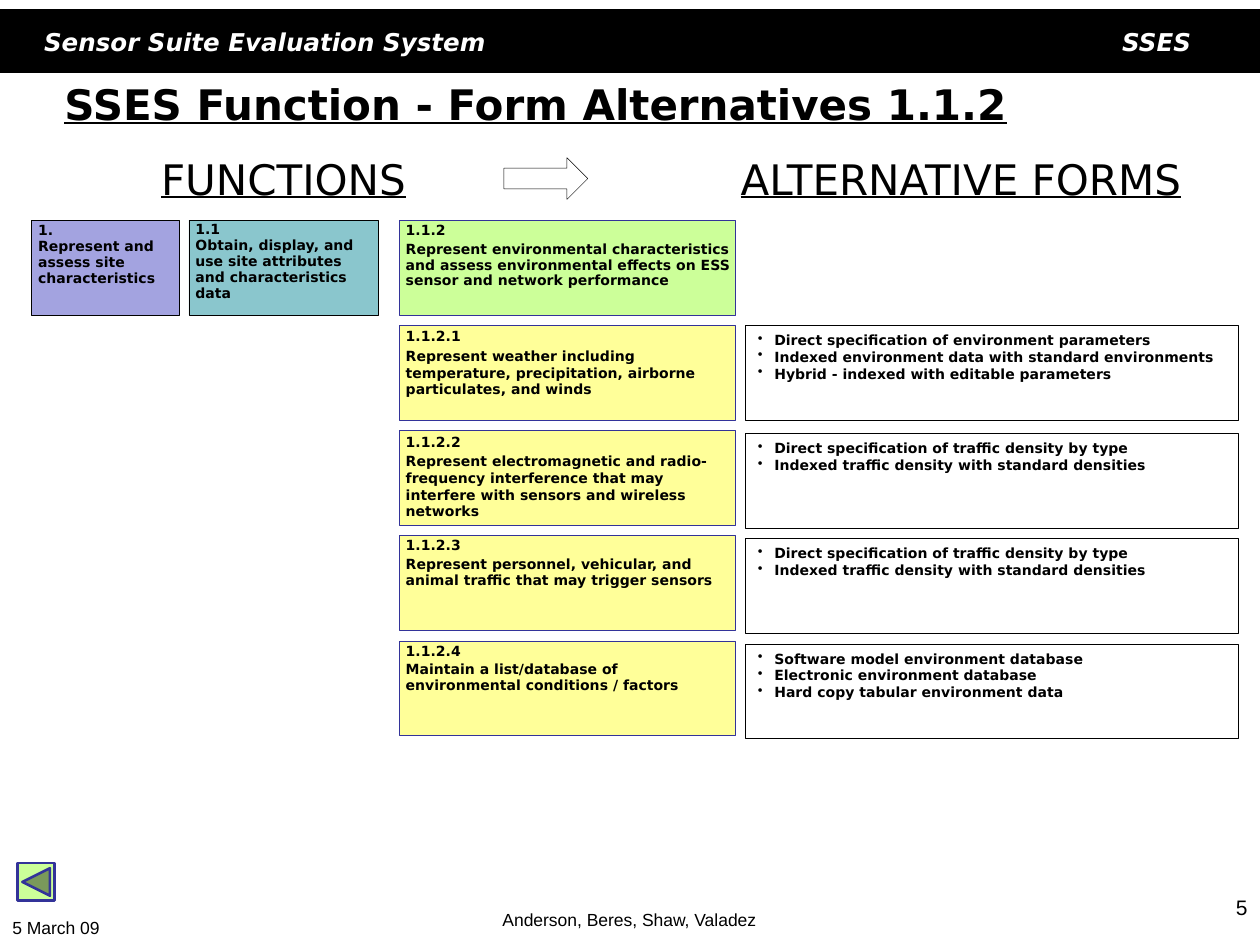
"""Build the SSES function and alternative forms slide for function 1.1.2."""
from lxml import etree
from pptx import Presentation, util as u
from pptx.dml.color import RGBColor
from pptx.enum import shapes, text
from pptx.oxml import ns

BLACK = RGBColor(0x00, 0x00, 0x00)
WHITE = RGBColor(0xFF, 0xFF, 0xFF)
LILAC = RGBColor(0xA3, 0xA3, 0xE0)
TEAL = RGBColor(0x8A, 0xC6, 0xCD)
GREEN = RGBColor(0xCC, 0xFF, 0x99)
YELLOW = RGBColor(0xFF, 0xFF, 0x99)
NAVY = RGBColor(0x33, 0x33, 0x99)
LEFT, CENTER, RIGHT = text.PP_ALIGN.LEFT, text.PP_ALIGN.CENTER, text.PP_ALIGN.RIGHT
TOP, MIDDLE, BOTTOM = text.MSO_ANCHOR.TOP, text.MSO_ANCHOR.MIDDLE, text.MSO_ANCHOR.BOTTOM
KINDS = shapes.MSO_SHAPE

deck = Presentation()
deck.slide_width, deck.slide_height = u.Cm(25.4), u.Cm(19.05)
page = deck.slides.add_slide(deck.slide_layouts[6])


def add_shape(kind, left, top, width, height, fill, line, weight=0.25):
    shape = page.shapes.add_shape(kind, u.Cm(left), u.Cm(top), u.Cm(width), u.Cm(height))
    shape.shadow.inherit = False
    if fill is None:
        shape.fill.background()
    else:
        shape.fill.solid()
        shape.fill.fore_color.rgb = fill
    shape.line.color.rgb = line
    shape.line.width = u.Pt(weight)
    return shape


def write(box, lines, size, font="DejaVu Sans", color=BLACK, bold=False, italic=False,
          underline=False, align=LEFT, anchor=TOP, spacing=1.0, before=0):
    frame = box.text_frame
    frame.word_wrap = True
    frame.vertical_anchor = anchor
    for index, line in enumerate(lines):
        para = frame.add_paragraph() if index else frame.paragraphs[0]
        para.alignment = align
        para.line_spacing = spacing
        para.space_before = u.Pt(before if index else 0)
        span = para.add_run()
        span.text = line
        span.font.name, span.font.size = font, u.Pt(size)
        span.font.color.rgb = color
        span.font.bold, span.font.italic, span.font.underline = bold, italic, underline


add_shape(KINDS.RECTANGLE, 0, 0.2, 25.4, 1.27, BLACK, BLACK, 0.75)

heading = {"size": 24, "underline": True}
banner = {"size": 14, "color": WHITE, "bold": True, "italic": True, "anchor": MIDDLE}
footer = {"size": 10, "font": "Arial"}
labels = [
    ("Sensor Suite Evaluation System", 0.64, 0.43, 12, 0.84, banner),
    ("SSES", 20.26, 0.43, 4, 0.84, {**banner, "align": RIGHT}),
    ("SSES Function - Form Alternatives 1.1.2", 1.05, 1.25, 22.86, 1.7,
     {**heading, "bold": True, "anchor": MIDDLE}),
    ("FUNCTIONS", 1.06, 2.96, 9.31, 1.27, {**heading, "align": CENTER}),
    ("ALTERNATIVE FORMS", 13.97, 2.96, 10.8, 1.27, {**heading, "align": CENTER}),
    ("5 March 09", 0, 18.36, 3.99, 0.69, footer),
    ("Anderson, Beres, Shaw, Valadez", 8, 17.98, 9.37, 0.89,
     {**footer, "align": CENTER, "anchor": BOTTOM}),
    ("5", 19.48, 17.91, 5.92, 1.14, {**footer, "size": 12, "align": RIGHT}),
]
for label, left, top, width, height, style in labels:
    box = page.shapes.add_textbox(u.Cm(left), u.Cm(top), u.Cm(width), u.Cm(height))
    write(box, [label], **style)

add_shape(KINDS.RIGHT_ARROW, 10.16, 3.18, 1.69, 0.84, WHITE, BLACK)

FIRST_ROW, ROW_STEP, ROW_HEIGHT = 4.44, 2.12, 1.91
FUNCTION_LEFT, FUNCTION_WIDTH = 8.05, 6.78
functions = [
    ("1.", "Represent and assess site characteristics",
     0, 0.64, 2.97, LILAC, BLACK, 0.95, 0, 0.05),
    ("1.1", "Obtain, display, and use site attributes and characteristics data",
     0, 3.81, 3.81, TEAL, BLACK, 0.95, 0, 0.03),
]
subfunctions = [
    ("1.1.2", "Represent environmental characteristics and assess environmental effects "
     "on ESS sensor and network performance", GREEN, 0.95),
    ("1.1.2.1", "Represent weather including temperature, precipitation, airborne "
     "particulates, and winds", YELLOW, 1.0),
    ("1.1.2.2", "Represent electromagnetic and radio-frequency interference that may "
     "interfere with sensors and wireless networks", YELLOW, 1.0),
    ("1.1.2.3", "Represent personnel, vehicular, and animal traffic that may trigger "
     "sensors", YELLOW, 0.95),
    ("1.1.2.4", "Maintain a list/database of environmental conditions / factors",
     YELLOW, 0.95),
]
for row, (number, name, fill, spacing) in enumerate(subfunctions):
    functions.append((number, name, row, FUNCTION_LEFT, FUNCTION_WIDTH, fill, NAVY,
                      spacing, 1.6, 0.05))

for number, name, row, left, width, fill, line, spacing, before, inset in functions:
    box = add_shape(KINDS.RECTANGLE, left, FIRST_ROW + row * ROW_STEP, width, ROW_HEIGHT,
                    fill, line)
    frame = box.text_frame
    frame.margin_left, frame.margin_right = u.Cm(0.13), u.Cm(0.05)
    frame.margin_top = frame.margin_bottom = u.Cm(inset)
    write(box, [number, name], 8, bold=True, spacing=spacing, before=before)

traffic = ["Direct specification of traffic density by type",
           "Indexed traffic density with standard densities"]
forms = [
    (6.56, ["Direct specification of environment parameters",
            "Indexed environment data with standard environments",
            "Hybrid - indexed with editable parameters"]),
    (8.74, traffic),
    (10.86, traffic),
    (12.98, ["Software model environment database",
             "Electronic environment database",
             "Hard copy tabular environment data"]),
]
for top, choices in forms:
    box = add_shape(KINDS.RECTANGLE, 15.03, top, 9.94, ROW_HEIGHT, None, BLACK)
    write(box, choices, 8, bold=True)
    for para in box.text_frame.paragraphs:
        properties = para._p.get_or_add_pPr()
        properties.set("marL", str(u.Cm(0.33)))
        properties.set("indent", str(u.Cm(-0.33)))
        etree.SubElement(properties, ns.qn("a:buChar")).set("char", "•")

add_shape(KINDS.ACTION_BUTTON_BACK_OR_PREVIOUS, 0.36, 17.4, 0.74, 0.76, GREEN, NAVY, 1.5)

deck.save("out.pptx")
